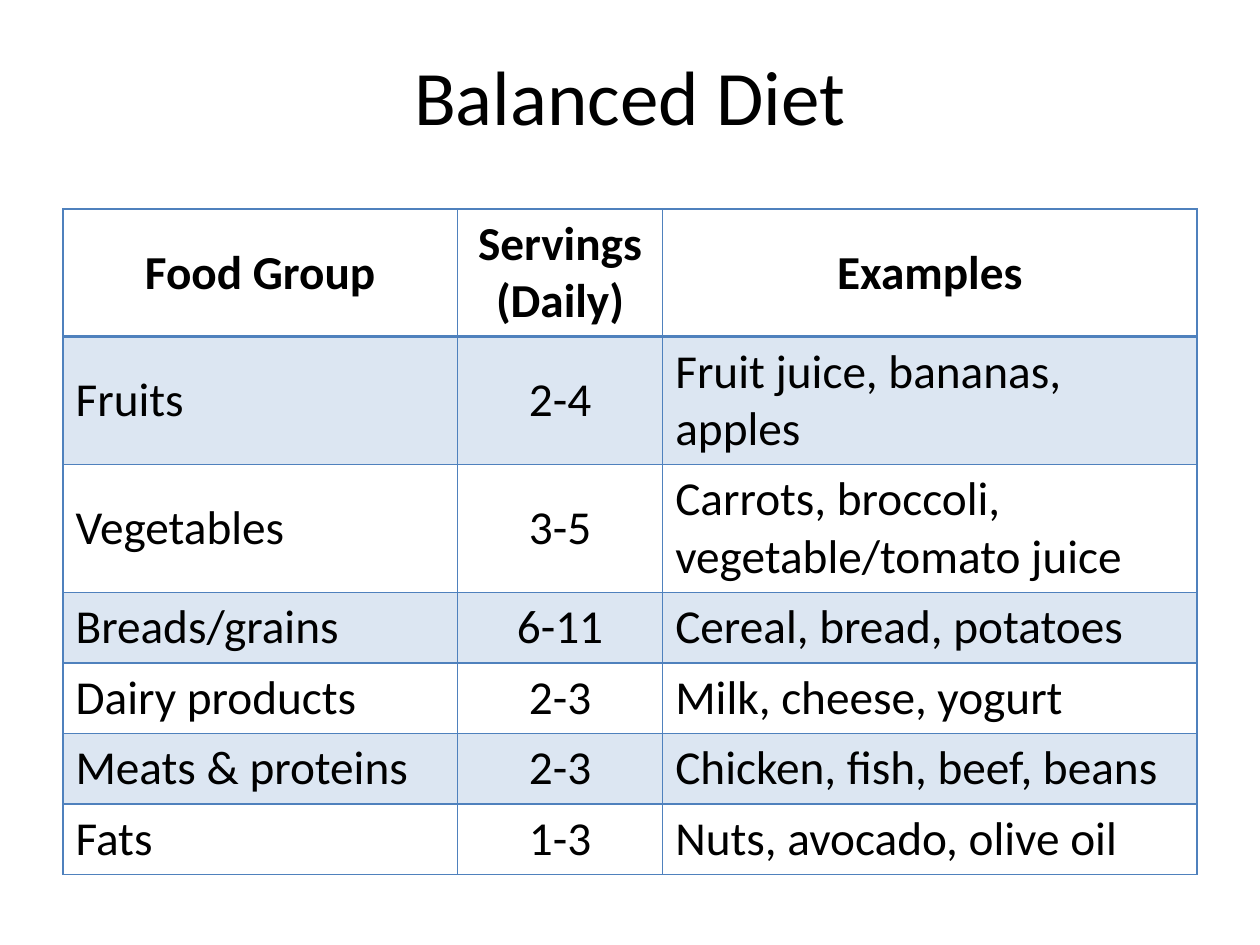
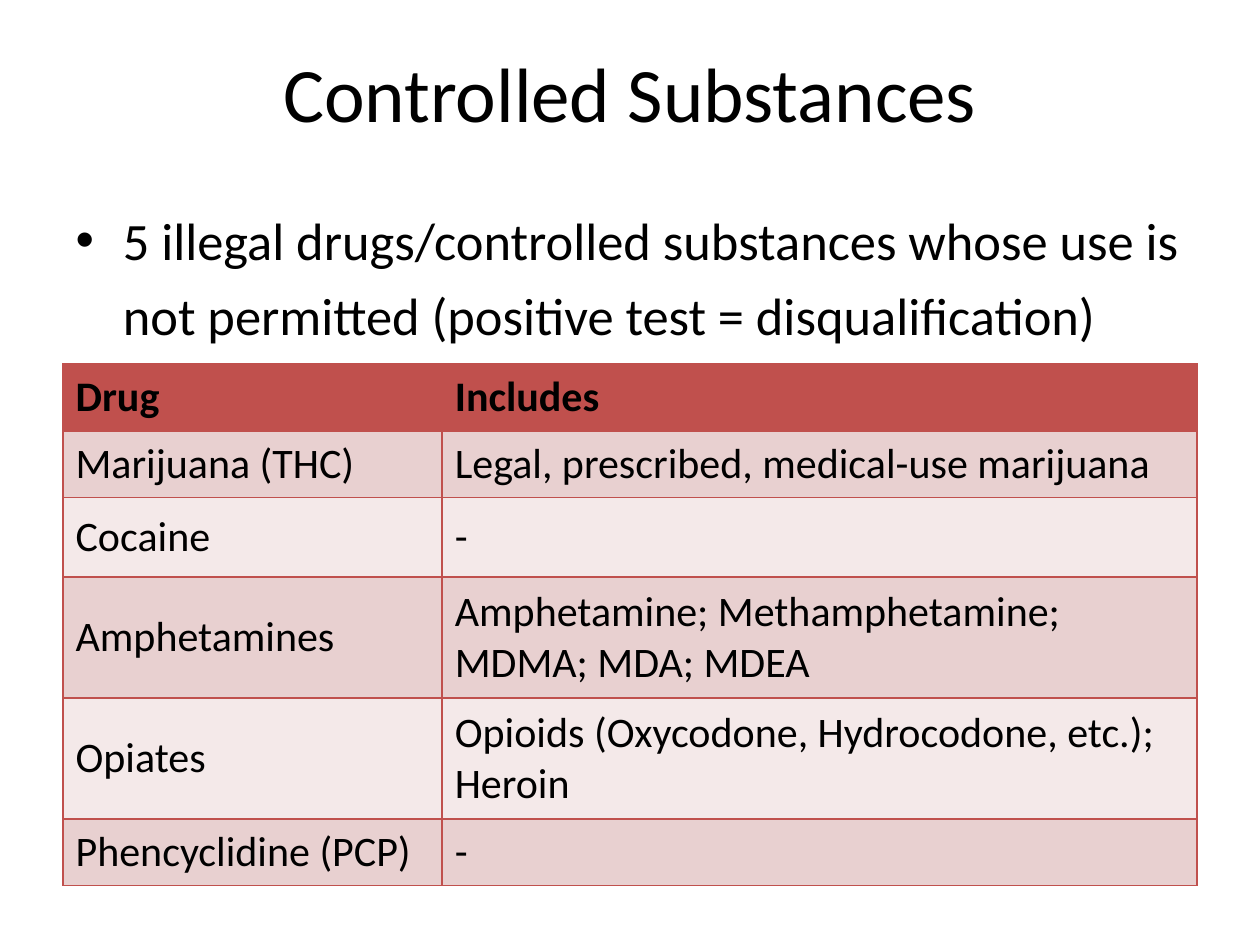
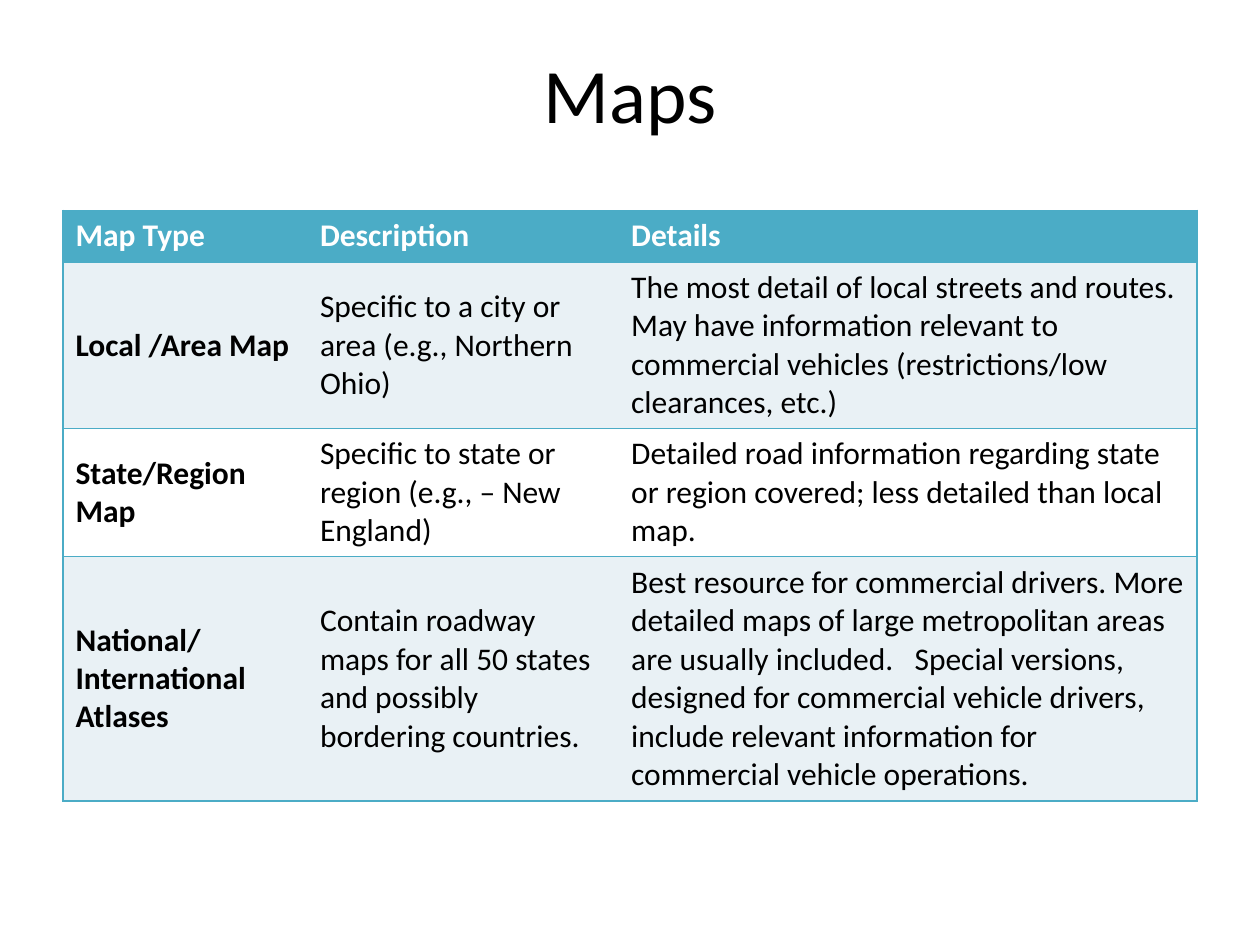
from lxml import etree
from pptx import Presentation
from pptx import util as u
from pptx.dml.color import RGBColor
from pptx.enum import text
from pptx.oxml import ns

COLORS = {
    "black": "000000", "white": "FFFFFF",
    "blue": "4F81BD", "pale_blue": "DCE6F2",
    "red": "C0504D", "pink": "E8D0D0", "pale_pink": "F4E9E9",
    "teal": "4BACC6", "pale_teal": "E9F1F5",
}
FONT = "Calibri"
LEFT, WIDTH = 0.5, 9
LEFT_AL, CENTER = text.PP_ALIGN.LEFT, text.PP_ALIGN.CENTER
TOP, MIDDLE = text.MSO_ANCHOR.TOP, text.MSO_ANCHOR.MIDDLE
TITLE_ONLY, TITLE_AND_BODY = 5, 1

DIET = [
    ["Food Group", "Servings\n(Daily)", "Examples"],
    ["Fruits", "2-4", "Fruit juice, bananas, apples"],
    ["Vegetables", "3-5", "Carrots, broccoli, vegetable/tomato juice"],
    ["Breads/grains", "6-11", "Cereal, bread, potatoes"],
    ["Dairy products", "2-3", "Milk, cheese, yogurt"],
    ["Meats & proteins", "2-3", "Chicken, fish, beef, beans"],
    ["Fats", "1-3", "Nuts, avocado, olive oil"],
]
DRUGS = [
    ["Drug", "Includes"],
    ["Marijuana (THC)", "Legal, prescribed, medical-use marijuana"],
    ["Cocaine", "-"],
    ["Amphetamines", "Amphetamine; Methamphetamine; MDMA; MDA; MDEA"],
    ["Opiates", "Opioids (Oxycodone, Hydrocodone, etc.); Heroin"],
    ["Phencyclidine (PCP)", "-"],
]
MAPS = [
    ["Map Type", "Description", "Details"],
    ["Local /Area Map", "Specific to a city or area (e.g., Northern Ohio)",
     "The most detail of local streets and routes.  May have information "
     "relevant to commercial vehicles (restrictions/low clearances, etc.)"],
    ["State/Region Map", "Specific to state or region (e.g., – New England)",
     "Detailed road information regarding state or region covered; "
     "less detailed than local map."],
    ["National/International Atlases",
     "Contain roadway maps for all 50 states and possibly bordering countries.",
     "Best resource for commercial drivers. More detailed maps of large "
     "metropolitan areas are usually included.   Special versions, designed "
     "for commercial vehicle drivers, include relevant information for "
     "commercial vehicle operations."],
]

DIET_STYLE = {
    "size": 27, "line": "blue", "header_fill": None, "bands": ["pale_blue", None],
    "header_color": "black", "header_anchor": MIDDLE, "header_align": CENTER,
    "aligns": [LEFT_AL, CENTER, LEFT_AL], "header_rule": 2,
    "inner_lines": True, "bold_first": False,
}
DRUG_STYLE = {
    **DIET_STYLE, "size": 24, "line": "red", "header_fill": "red",
    "bands": ["pink", "pale_pink"], "header_align": LEFT_AL,
    "aligns": [LEFT_AL] * 2, "header_rule": 1,
}
MAP_STYLE = {
    **DRUG_STYLE, "size": 18, "line": "teal", "header_fill": "teal",
    "bands": ["pale_teal", "white"], "header_color": "white",
    "header_anchor": TOP, "aligns": [LEFT_AL] * 3,
    "inner_lines": False, "bold_first": True,
}


def rgb(name):
    return RGBColor.from_string(COLORS[name])


def apply(obj, values):
    for name, value in values.items():
        setattr(obj, name, value)


def format_font(font, size, color="black", bold=False):
    apply(font, {"name": FONT, "size": u.Pt(size), "bold": bold})
    font.color.rgb = rgb(color)


def place(sp, box):
    apply(sp, dict(zip(("left", "top", "width", "height"), map(u.Inches, box))))


def add_slide(prs, layout, title, box):
    s = prs.slides.add_slide(prs.slide_layouts[layout])
    sp = s.shapes.title
    place(sp, box)
    tf = sp.text_frame
    tf.text = title
    apply(tf, {"vertical_anchor": MIDDLE, "auto_size": text.MSO_AUTO_SIZE.NONE})
    p = tf.paragraphs[0]
    p.alignment = CENTER
    format_font(p.runs[0].font, 44)
    return s


def fill_body(s, bullet, box):
    sp = s.placeholders[1]
    place(sp, box)
    tf = sp.text_frame
    tf.text = bullet
    tf.auto_size = text.MSO_AUTO_SIZE.NONE
    p = tf.paragraphs[0]
    apply(p, {"line_spacing": 1.2, "space_before": u.Pt(6)})
    format_font(p.runs[0].font, 30)


def set_borders(cell, color, widths):
    tc_pr = cell._tc.get_or_add_tcPr()
    for side in "LRTB":
        width = widths[side]
        ln = etree.SubElement(tc_pr, ns.qn("a:ln" + side), w=str(u.Pt(width)))
        if width:
            fill = etree.SubElement(ln, ns.qn("a:solidFill"))
            etree.SubElement(fill, ns.qn("a:srgbClr"), val=COLORS[color])
        else:
            etree.SubElement(ln, ns.qn("a:noFill"))


def format_cell(cell, value, row, col, last_col, style):
    header = row == 0
    inner = 1 if style["inner_lines"] else 0
    set_borders(cell, style["line"], {
        "L": 1 if col == 0 else inner,
        "R": 1 if col == last_col else inner,
        "T": style["header_rule"] if row == 1 else 1,
        "B": style["header_rule"] if header else 1,
    })
    fill = style["header_fill"] if header else style["bands"][(row - 1) % 2]
    if fill:
        cell.fill.solid()
        cell.fill.fore_color.rgb = rgb(fill)
    else:
        cell.fill.background()
    cell.text = value
    cell.vertical_anchor = style["header_anchor"] if header else MIDDLE
    for p in cell.text_frame.paragraphs:
        p.alignment = style["header_align"] if header else style["aligns"][col]
        for r in p.runs:
            format_font(r.font, style["size"],
                        style["header_color"] if header else "black",
                        header or (style["bold_first"] and col == 0))


def add_grid(s, data, top, widths, heights, style):
    box = map(u.Inches, (LEFT, top, WIDTH, sum(heights)))
    table = s.shapes.add_table(len(data), len(widths), *box).table
    apply(table, {"first_row": False, "horz_banding": False})
    for column, width in zip(table.columns, widths):
        column.width = u.Inches(width)
    for row, height in zip(table.rows, heights):
        row.height = u.Inches(height)
    for i, values in enumerate(data):
        for j, value in enumerate(values):
            format_cell(table.cell(i, j), value, i, j, len(widths) - 1, style)


def diet_slide(prs):
    s = add_slide(prs, TITLE_ONLY, "Balanced Diet", (LEFT, 0.25, WIDTH, 1))
    add_grid(s, DIET, 1.66, [3.13, 1.63, 4.24],
             [1.01] * 3 + [0.56] * 4, DIET_STYLE)


def drug_slide(prs):
    s = add_slide(prs, TITLE_AND_BODY, "Controlled Substances",
                  (LEFT, 0.21, WIDTH, 1.04))
    fill_body(s, "5 illegal drugs/controlled substances whose use is not "
                 "permitted (positive test = disqualification)",
              (LEFT, 1.5, WIDTH, 1.39))
    add_grid(s, DRUGS, 2.89, [3.01, 5.99],
             [0.53, 0.53, 0.63, 0.96, 0.96, 0.53], DRUG_STYLE)


def map_slide(prs):
    s = add_slide(prs, TITLE_ONLY, "Maps", (LEFT, 0.22, WIDTH, 1.03))
    add_grid(s, MAPS, 1.67, [1.94, 2.47, 4.59],
             [0.41, 1.32, 1.01, 1.94], MAP_STYLE)


def main():
    prs = Presentation()
    apply(prs, {"slide_width": u.Inches(10), "slide_height": u.Inches(7.5)})
    for build in (diet_slide, drug_slide, map_slide):
        build(prs)
    prs.save("out.pptx")


if __name__ == "__main__":
    main()
